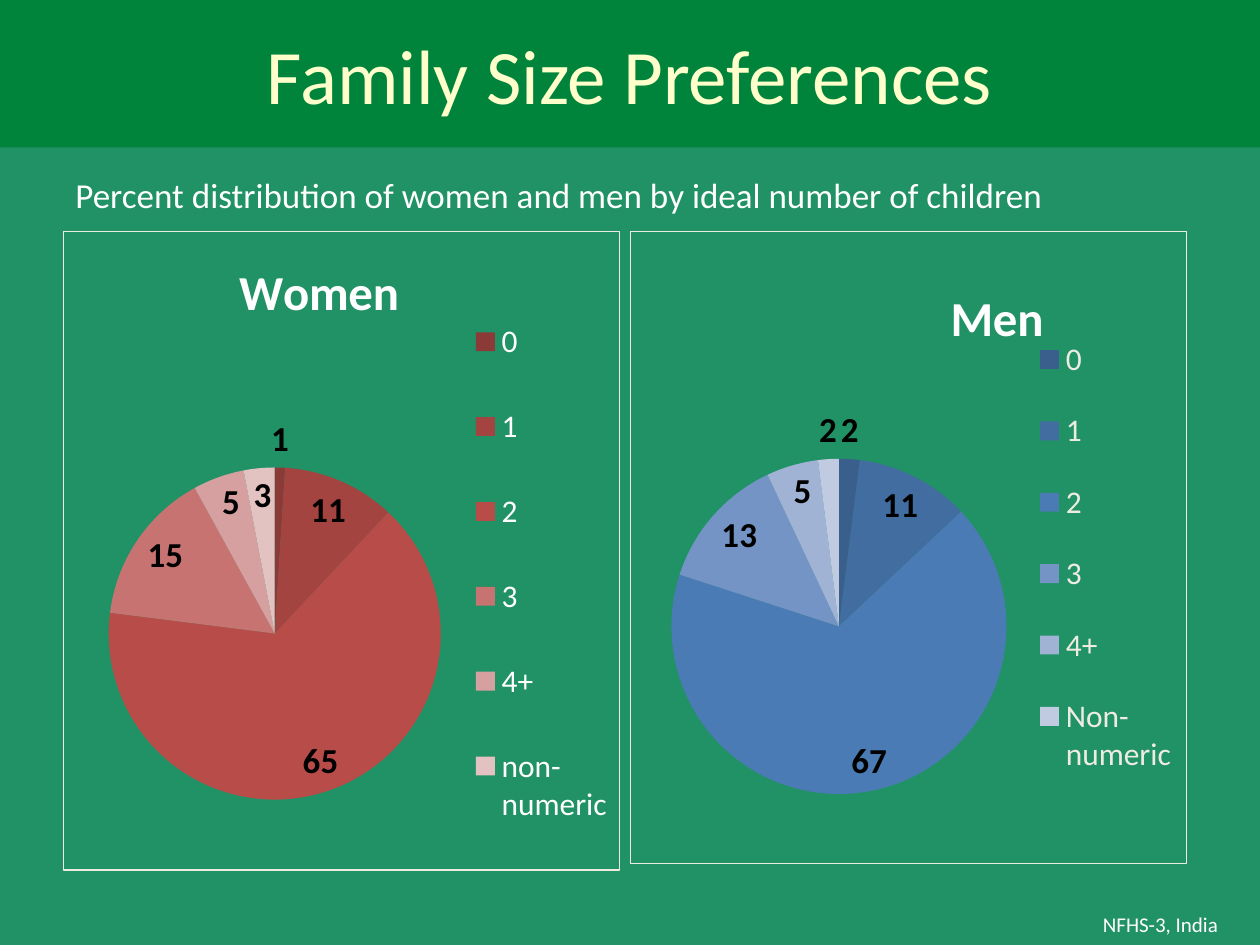
from lxml.etree import SubElement
from pptx import Presentation
from pptx.chart.data import CategoryChartData
from pptx.dml.color import RGBColor
from pptx.enum.chart import XL_CHART_TYPE as ChartType
from pptx.enum.chart import XL_LABEL_POSITION as LabelPos
from pptx.enum.chart import XL_LEGEND_POSITION as LegendPos
from pptx.enum.shapes import MSO_SHAPE as Shape
from pptx.enum.text import MSO_ANCHOR as Anchor
from pptx.enum.text import MSO_AUTO_SIZE as AutoSize
from pptx.enum.text import PP_ALIGN as Align
from pptx.oxml import parse_xml
from pptx.oxml.ns import nsdecls, qn
from pptx.util import Inches, Pt

TITLE = "Family Size Preferences"
SUBTITLE = "Percent distribution of women and men by ideal number of children"
SOURCE = "NFHS-3, India"

# Layouts are fractions of the chart frame: x, y and, where sized, width, height.
PIES = [
    {
        "name": "Women",
        "values": {"0": 1, "1": 11, "2": 65, "3": 15, "4+": 5, "non-numeric": 3},
        "shades": ["8C3A38", "A44440", "B84C49", "C77371", "D5A09F", "E3C3C2"],
        "legend_color": "FFFFFF",
        "box": (0.5, 1.83, 4.42, 5.08),
        "title_at": (0.3, 0.03),
        "plot_at": (0.08, 0.37, 0.6, 0.52),
        "legend_at": (0.72, 0.07, 0.28, 0.93),
    },
    {
        "name": "Men",
        "values": {"0": 2, "1": 11, "2": 67, "3": 13, "4+": 5, "Non-numeric": 2},
        "shades": ["3A5F8C", "426DA1", "4A7BB5", "7394C5", "A0B3D5", "C0CBE2"],
        "legend_color": "EEECE1",
        "box": (5, 1.83, 4.42, 5.03),
        "title_at": (0.56, 0.07),
        "plot_at": (0.07, 0.36, 0.61, 0.53),
        "legend_at": (0.71, 0.12, 0.29, 0.79),
    },
]

THEME = {
    "font": "Calibri",
    "background": "219166",
    "banner": "00843C",
    "border": "EEECE1",
    "title": {"size": 44, "color": "FFFFCC", "bold": False},
    "subtitle": {"size": 20, "color": "FFFFFF"},
    "source": {"size": 12, "color": "FFFFFF"},
    "chart": {"size": 18, "color": "000000"},
    "chart_title": {"size": 28, "color": "FFFFFF", "bold": True},
    "labels": {"size": 20, "color": "000000", "bold": True},
}


def inches(box):
    return [Inches(length) for length in box]


def paint(fill, color):
    fill.solid()
    fill.fore_color.rgb = RGBColor.from_string(color)


def style(font, size, color, bold=None):
    values = {"name": THEME["font"], "size": Pt(size), "bold": bold}
    for attribute, value in values.items():
        setattr(font, attribute, value)
    font.color.rgb = RGBColor.from_string(color)


def write(frame, text, look, align=Align.LEFT, anchor=Anchor.TOP):
    frame.text = text
    frame.word_wrap = True
    frame.vertical_anchor = anchor
    paragraph = frame.paragraphs[0]
    paragraph.alignment = align
    style(paragraph.runs[0].font, **THEME[look])


def place(parent, fractions, after=None, inner=False):
    """Give a chart part a manual layout, after the named child or first."""
    for old in parent.findall(qn("c:layout")):
        parent.remove(old)
    layout = parse_xml(f"<c:layout {nsdecls('c')}/>")
    manual = SubElement(layout, qn("c:manualLayout"))
    settings = [("layoutTarget", "inner")] if inner else []
    settings += [("xMode", "edge"), ("yMode", "edge")]
    settings += zip("xywh", fractions)
    for tag, value in settings:
        SubElement(manual, qn(f"c:{tag}")).set("val", str(value))
    if after:
        parent.find(qn(after)).addnext(layout)
    else:
        parent.insert(0, layout)


def frame_chart(space):
    border = parse_xml(
        f"<c:spPr {nsdecls('c', 'a')}><a:noFill/><a:ln w='{Pt(0.75)}'><a:solidFill>"
        f"<a:srgbClr val='{THEME['border']}'/></a:solidFill></a:ln></c:spPr>"
    )
    space.find(qn("c:chart")).addnext(border)


def add_pie(slide, pie):
    data = CategoryChartData()
    data.categories = list(pie["values"])
    data.add_series(pie["name"], list(pie["values"].values()))
    chart = slide.shapes.add_chart(ChartType.PIE, *inches(pie["box"]), data).chart
    style(chart.font, **THEME["chart"])
    frame_chart(chart.element)

    chart.has_title = True
    heading = chart.chart_title
    heading.text_frame.text = pie["name"]
    style(heading.text_frame.paragraphs[0].runs[0].font, **THEME["chart_title"])
    place(heading.element if hasattr(heading, "element") else
          chart.element.find(".//" + qn("c:title")), pie["title_at"], "c:tx")

    chart.has_legend = True
    chart.legend.position = LegendPos.RIGHT
    chart.legend.include_in_layout = False
    style(chart.legend.font, THEME["chart"]["size"], pie["legend_color"])
    place(chart.element.find(".//" + qn("c:legend")), pie["legend_at"], "c:legendPos")

    plot = chart.plots[0]
    plot.vary_by_categories = True
    place(chart.element.find(".//" + qn("c:plotArea")), pie["plot_at"], inner=True)
    series = plot.series[0]
    for index, shade in enumerate(pie["shades"]):
        paint(series.points[index].format.fill, shade)
    labels = series.data_labels
    labels.show_value = True
    labels.position = LabelPos.BEST_FIT
    style(labels.font, **THEME["labels"])


def main():
    deck = Presentation()
    deck.slide_width, deck.slide_height = Inches(10), Inches(7.5)
    slide = deck.slides.add_slide(deck.slide_layouts[5])
    paint(slide.background.fill, THEME["background"])

    banner = slide.shapes.title
    banner.left, banner.top, banner.width, banner.height = inches((0, 0, 10, 1.17))
    paint(banner.fill, THEME["banner"])
    write(banner.text_frame, TITLE, "title", Align.CENTER, Anchor.MIDDLE)

    for pie in PIES:
        add_pie(slide, pie)

    source = slide.shapes.add_shape(Shape.RECTANGLE, *inches((8.42, 7.17, 1.58, 0.33)))
    source.shadow.inherit = False
    paint(source.fill, THEME["background"])
    source.line.fill.background()
    write(source.text_frame, SOURCE, "source", Align.CENTER, Anchor.MIDDLE)

    subtitle = slide.shapes.add_textbox(*inches((0.5, 1.33, 8.67, 0.44)))
    write(subtitle.text_frame, SUBTITLE, "subtitle")
    subtitle.text_frame.auto_size = AutoSize.SHAPE_TO_FIT_TEXT

    deck.save("out.pptx")


if __name__ == "__main__":
    main()
